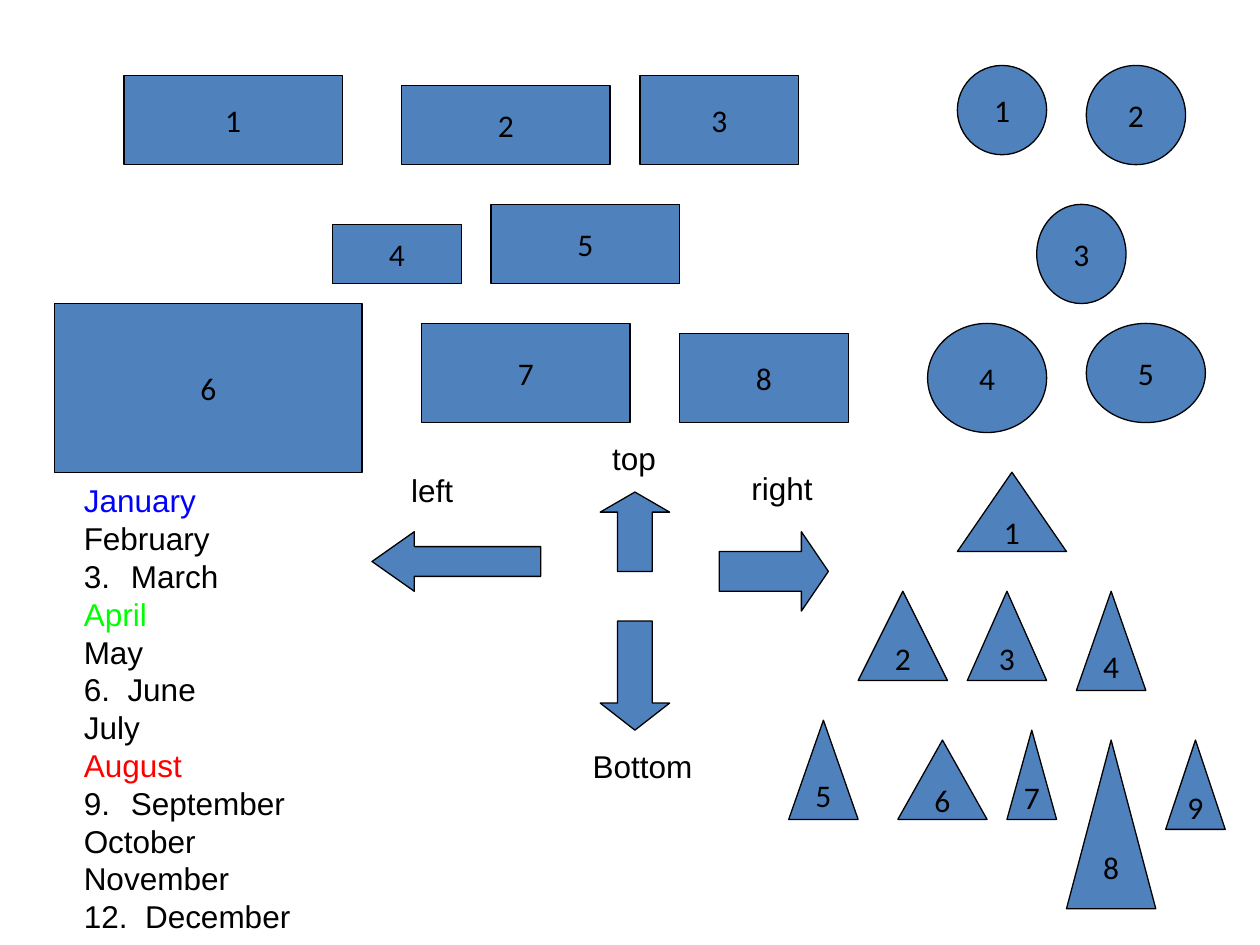
import lxml.etree
import pptx
import pptx.dml.color
import pptx.enum.shapes
import pptx.enum.text
import pptx.oxml.ns
import pptx.util

Cm = pptx.util.Cm
Kind = pptx.enum.shapes.MSO_SHAPE
BLACK = "000000"


def color(code):
    return pptx.dml.color.RGBColor.from_string(code)


def write(para, text, font, code=BLACK):
    run = para.add_run()
    run.text = text
    run.font.name = font
    run.font.size = pptx.util.Pt(18)
    run.font.color.rgb = color(code)


deck = pptx.Presentation()
deck.slide_width, deck.slide_height = Cm(25.4), Cm(19.05)
slide = deck.slides.add_slide(deck.slide_layouts[6])

# Each group is numbered in order: left, top, width, height in cm
groups = {
    Kind.RECTANGLE: [
        (2.5, 1.52, 4.4, 1.8), (8.1, 1.72, 4.2, 1.6), (12.9, 1.52, 3.2, 1.8),
        (6.7, 4.52, 2.6, 1.2), (9.9, 4.12, 3.8, 1.6),
        (1.1, 6.12, 6.2, 3.4), (8.5, 6.52, 4.2, 2), (13.7, 6.72, 3.4, 1.8),
    ],
    Kind.OVAL: [
        (19.3, 1.32, 1.8, 1.8), (21.9, 1.32, 2, 2), (20.9, 4.12, 1.8, 2),
        (18.7, 6.52, 2.4, 2.2), (21.9, 6.52, 2.4, 2),
    ],
    Kind.ISOSCELES_TRIANGLE: [
        (19.3, 9.52, 2.2, 1.6),
        (17.3, 11.92, 1.8, 1.8), (19.5, 11.92, 1.6, 1.8), (21.7, 11.92, 1.4, 2),
        (15.9, 14.52, 1.4, 2), (18.1, 14.92, 1.8, 1.6), (20.3, 14.72, 1, 1.8),
        (21.5, 14.92, 1.8, 3.4), (23.5, 14.92, 1.2, 1.8),
    ],
}
arrows = [
    (Kind.UP_ARROW, (12.1, 9.92, 1.4, 1.6), 0.29),
    (Kind.DOWN_ARROW, (12.1, 12.52, 1.4, 2.2), 0.39),
    (Kind.RIGHT_ARROW, (14.5, 10.72, 2.2, 1.6), 0.34),
    (Kind.LEFT_ARROW, (7.5, 10.72, 3.4, 1.2), 0.71),
]

items = [(kind, box, str(num), None)
         for kind, boxes in groups.items()
         for num, box in enumerate(boxes, 1)]
items += [(kind, box, "", head) for kind, box, head in arrows]

for kind, box, text, head in items:
    shape = slide.shapes.add_shape(kind, *map(Cm, box))
    shape.shadow.inherit = False
    shape.fill.solid()
    shape.fill.fore_color.rgb = color("4F81BD")
    shape.line.color.rgb = color(BLACK)
    shape.line.width = pptx.util.Pt(0.75)
    if head:
        shape.adjustments[0] = 0.5
        shape.adjustments[1] = head
    if text:
        frame = shape.text_frame
        frame.word_wrap = False
        frame.vertical_anchor = pptx.enum.text.MSO_ANCHOR.MIDDLE
        para = frame.paragraphs[0]
        para.alignment = pptx.enum.text.PP_ALIGN.CENTER
        write(para, text, "Calibri")

months = ["January", "February", "March", "April", "May", "6.  June", "July",
          "August", "September", "October", "November", "12.  December"]
tints = {"January": "0000FF", "April": "00FF00", "August": "FF0000"}
starts = {"March": 3, "September": 9}  # months with automatic numbers

notes = [
    ((1.44, 9.58, 4.7, 9.4), months),
    ((12.09, 8.72, 1.42, 1.02), ["top"]),
    ((11.7, 14.93, 2.6, 1.02), ["Bottom"]),
    ((14.9, 9.34, 1.8, 1.02), ["right"]),
    ((8.04, 9.37, 1.4, 1.02), ["left"]),
]
for box, lines in notes:
    frame = slide.shapes.add_textbox(*map(Cm, box)).text_frame
    frame.word_wrap = False
    frame.auto_size = pptx.enum.text.MSO_AUTO_SIZE.SHAPE_TO_FIT_TEXT
    for num, line in enumerate(lines):
        para = frame.add_paragraph() if num else frame.paragraphs[0]
        write(para, line, "Arial", tints.get(line, BLACK))
        if lines is months:
            props = para._p.get_or_add_pPr()
            props.set("marL", str(Cm(0.95)))
            props.set("indent", str(-Cm(0.95)))
            if line in starts:
                lxml.etree.SubElement(
                    props, pptx.oxml.ns.qn("a:buAutoNum"),
                    type="arabicPeriod", startAt=str(starts[line]))

deck.save("out.pptx")
